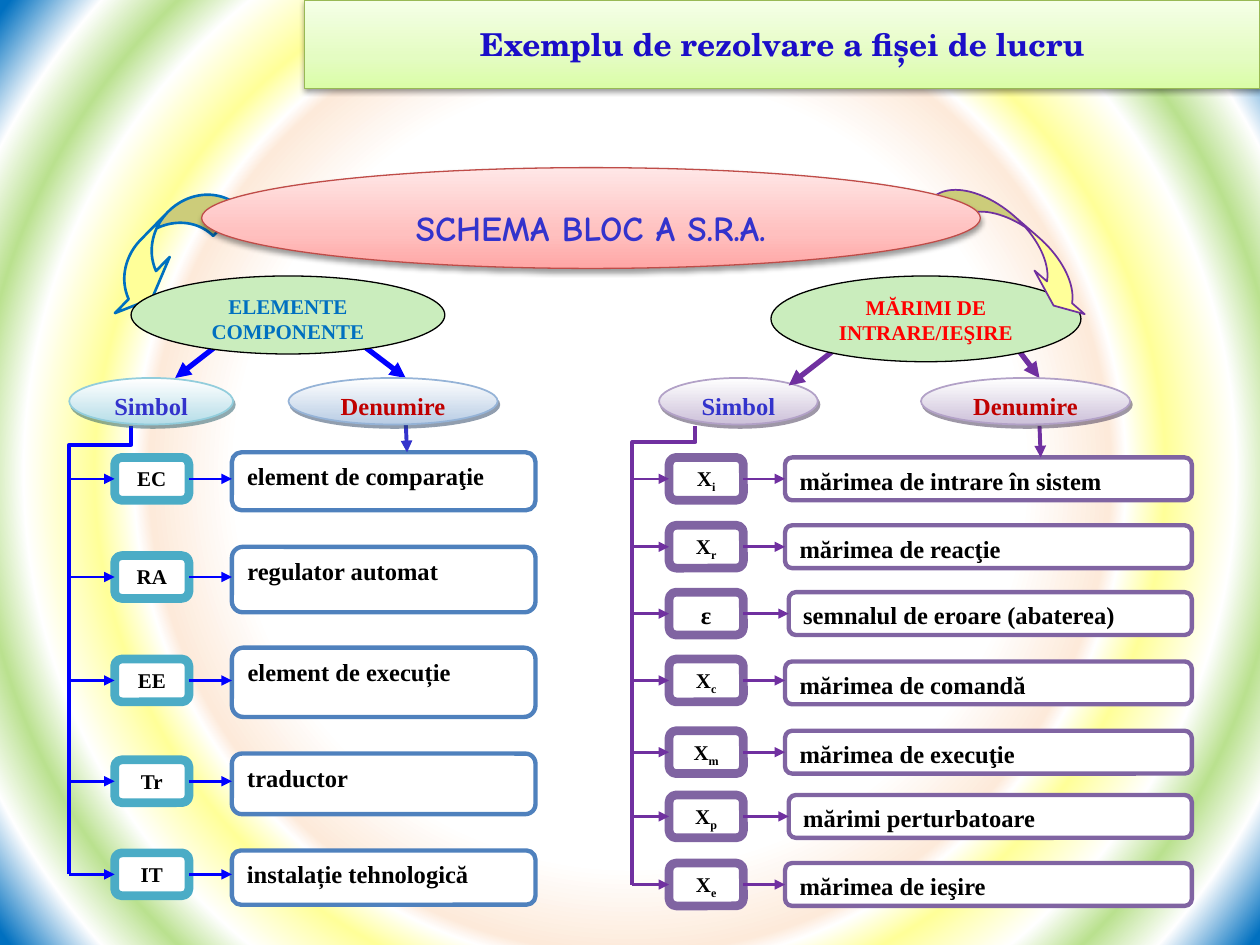
"""Build the worksheet slide: block diagram symbols and their names."""
from typing import NamedTuple

from pptx import Presentation
from pptx.dml.color import RGBColor as Color
from pptx.enum.shapes import MSO_CONNECTOR as Link, MSO_SHAPE as Preset
from pptx.enum.text import MSO_ANCHOR as Anchor, MSO_AUTO_SIZE as AutoSize, PP_ALIGN as Align
from pptx.oxml import parse_xml
from pptx.oxml.ns import nsdecls, qn
from pptx.util import Pt

COLORS = {
    "white": "FFFFFF", "black": "000000", "title": "1B0EC8", "indigo": "3333CC",
    "blue": "0000FF", "azure": "0070C0", "purple": "7030A0", "violet": "8064A2",
    "teal": "4BACC6", "steel": "4F81BD", "red": "FF0000", "dark red": "C00000",
    "mint": "CAEDBD", "yellow": "FFFF99", "peach": "FDEADA", "green": "BAE18F",
    "lime": "DAFDA7", "lime mid": "E4FCC2", "lime light": "F5FFE7", "lime edge": "98B955",
    "rose": "FFA6A5", "rose mid": "FFC0BF", "rose light": "FFE7E7", "rose edge": "BF4C48",
    "aqua": "B6DDE8", "aqua edge": "92CDDC", "aqua shade": "205867",
    "sky": "B8CCE4", "sky edge": "95B3D7", "sky shade": "243F60",
    "lilac": "CCC0D9", "lilac edge": "B2A1C7", "lilac shade": "3F3151",
}
SERIF = "Times New Roman"
SOFT_SHADOW = ("black", 38, 3.1, 1.6, 90)


class Row(NamedTuple):
    """A symbol with its subscript, its name and the places of both boxes."""
    symbol: str
    subscript: str
    name: str
    top: float
    name_top: float
    name_height: float = 24.5
    name_left: float = 448.6
    size: int = 12


LEFT_ROWS = [
    Row("EC", "", "element de comparaţie", 261.4, 258.5, 33.1, 132.5),
    Row("RA", "", "regulator automat", 317.5, 312.5, 37.4, 132.5),
    Row("EE", "", "element de execuție", 376.6, 370.1, 39.6, 132.5),
    Row("Tr", "", "traductor", 434.2, 430.6, 34.6, 132.5),
    Row("IT", "", "instalație tehnologică", 487.4, 486, 31, 132.5),
]
RIGHT_ROWS = [
    Row("X", "i", "mărimea de intrare în sistem", 261.4, 261.4),
    Row("X", "r", "mărimea de reacţie", 300.2, 300.2),
    Row("ε", "", "semnalul de eroare (abaterea)", 338.4, 338.4, name_left=450.7, size=14),
    Row("X", "c", "mărimea de comandă", 376.6, 378),
    Row("X", "m", "mărimea de execuţie", 417.6, 417.6),
    Row("X", "p", "mărimi perturbatoare", 454.3, 454.3, name_left=450.7),
    Row("X", "e", "mărimea de ieşire", 493.2, 493.2),
]


def rgb(name):
    """Return the named colour."""
    return Color.from_string(COLORS[name])


def apply(target, **formats):
    """Set every format value on the target."""
    for name, value in formats.items():
        setattr(target, name, value)


def set_gradient(fill, properties, stops, direction):
    """Fill with a gradient of (percent, colour) stops."""
    fill.solid()
    marks = "".join(f'<a:gs pos="{position * 1000}"><a:srgbClr val="{COLORS[name]}"/></a:gs>'
                    for position, name in stops)
    gradient = parse_xml(f'<a:gradFill {nsdecls("a")} rotWithShape="1"><a:gsLst>{marks}</a:gsLst>'
                         f'{direction}</a:gradFill>')
    properties.replace(properties.find(qn("a:solidFill")), gradient)


def style_shape(shape, fill, line, width, shadow=None, angle=90):
    """Give a shape its plain or gradient fill, its outline and its shadow."""
    properties = shape.element.spPr
    if isinstance(fill, str):
        shape.fill.solid()
        shape.fill.fore_color.rgb = rgb(fill)
    else:
        set_gradient(shape.fill, properties, fill, f'<a:lin ang="{angle * 60000}" scaled="0"/>')
    shape.line.color.rgb = rgb(line)
    shape.line.width = Pt(width)
    shape.shadow.inherit = False
    if shadow:
        name, alpha, blur, distance, heading = shadow
        properties.find(qn("a:effectLst")).append(parse_xml(
            f'<a:outerShdw {nsdecls("a")} blurRad="{Pt(blur)}" dist="{Pt(distance)}" '
            f'dir="{heading * 60000}" rotWithShape="0"><a:srgbClr val="{COLORS[name]}">'
            f'<a:alpha val="{alpha * 1000}"/></a:srgbClr></a:outerShdw>'))


def write(shape, text, size, color="black", font=SERIF, align=Align.CENTER, after=10,
          subscript="", **frame_formats):
    """Write one bold paragraph, with an optional subscript."""
    frame = shape.text_frame
    apply(frame, **{"word_wrap": True, "auto_size": AutoSize.NONE,
                    "vertical_anchor": Anchor.TOP, **frame_formats})
    paragraph = frame.paragraphs[0]
    apply(paragraph, alignment=align, space_after=Pt(after))
    for part in filter(None, (text, subscript)):
        run = paragraph.add_run()
        run.text = part
        apply(run.font, name=font, size=Pt(size), bold=True)
        run.font.color.rgb = rgb(color)
    if subscript:
        run._r.get_or_add_rPr().set("baseline", "-25000")


def add_shape(slide, preset, box, *style, **options):
    """Add a styled preset shape at left, top, width, height."""
    shape = slide.shapes.add_shape(preset, *map(Pt, box))
    style_shape(shape, *style, **options)
    return shape


def add_line(slide, start, end, color, width, kind=Link.STRAIGHT, arrow=True):
    """Add a connector, with an arrowhead at its end."""
    line = slide.shapes.add_connector(kind, *map(Pt, start + end))
    line.line.color.rgb = rgb(color)
    line.line.width = Pt(width)
    properties = line.element.spPr
    if arrow:
        properties.find(qn("a:ln")).append(parse_xml(f'<a:tailEnd {nsdecls("a")} type="triangle"/>'))
    properties.append(parse_xml(f'<a:effectLst {nsdecls("a")}/>'))
    return line


def add_bus(slide, start, end, color, bend):
    """Add an elbow that leaves downwards, turned a quarter about its centre."""
    half_length, half_depth = (end[1] - start[1]) / 2, (start[0] - end[0]) / 2
    x, y = (start[0] + end[0]) / 2, (start[1] + end[1]) / 2
    bus = add_line(slide, (x - half_length, y - half_depth), (x + half_length, y + half_depth),
                   color, 2.25, Link.ELBOW, False)
    bus.element.spPr.xfrm.set("rot", str(90 * 60000))
    guides = bus.element.spPr.find(qn("a:prstGeom")).get_or_add_avLst()
    guides.append(parse_xml(f'<a:gd {nsdecls("a")} name="adj1" fmla="val {bend}"/>'))


def add_column(slide, rows, left, right, bus_start, bus_x, bend, edges, color):
    """Add the symbol boxes, the name boxes and the arrows joining them."""
    symbol_edge, name_edge = edges
    for row in rows:
        symbol = add_shape(slide, Preset.ROUNDED_RECTANGLE, (left, row.top, 42.5, 24.5),
                           "white", symbol_edge, 5)
        write(symbol, row.symbol, row.size, subscript=row.subscript)
        name = add_shape(slide, Preset.ROUNDED_RECTANGLE,
                         (row.name_left, row.name_top, right - row.name_left, row.name_height),
                         "white", name_edge, 2.5)
        write(name, row.name, 14, align=Align.LEFT)
        middle = row.top + 12.25
        add_line(slide, (bus_x, middle), (left, middle), color, 1.5).end_connect(symbol, 1)
        arrow = add_line(slide, (left + 42.5, middle), (row.name_left, middle), color, 1.5)
        arrow.begin_connect(symbol, 3)
        if row.top == row.name_top:
            arrow.end_connect(name, 1)
    add_bus(slide, bus_start, (bus_x, middle), color, bend)


def add_heading(slide, text, left, width, tint, color):
    """Add a small oval column heading."""
    oval = add_shape(slide, Preset.OVAL, (left, 216, width, 26.6), [(0, "white"), (100, tint)],
                     f"{tint} edge", 1, shadow=(f"{tint} shade", 50, 0, 2.2, 63))
    write(oval, text, 14, color)


def add_curved_arrow(slide, box, rotation, line, width, flip=False):
    """Add a turned curved arrow."""
    arrow = add_shape(slide, Preset.CURVED_DOWN_ARROW, box, "yellow", line, width)
    arrow.rotation = rotation
    for index, value in enumerate((0.798, 1.597, 0.333)):
        arrow.adjustments[index] = value
    if flip:
        arrow.element.spPr.xfrm.set("flipH", "1")


def add_title(slide):
    """Shape the title placeholder as an elliptical callout."""
    title = slide.shapes.title
    apply(title, left=Pt(174.2), top=Pt(0), width=Pt(545.8), height=Pt(50.4))
    title.element.spPr.append(parse_xml(
        f'<a:prstGeom {nsdecls("a")} prst="wedgeEllipseCallout"><a:avLst>'
        '<a:gd name="adj1" fmla="val -26500"/><a:gd name="adj2" fmla="val 119400"/>'
        '</a:avLst></a:prstGeom>'))
    style_shape(title, [(0, "lime"), (35, "lime mid"), (100, "lime light")],
                "lime edge", 0.75, SOFT_SHADOW, 270)
    write(title, "Exemplu de rezolvare a fișei de lucru", 18, "title", "TeX Gyre Schola",
          after=0, vertical_anchor=Anchor.MIDDLE)


def main():
    """Build and save the slide."""
    presentation = Presentation()
    apply(presentation, slide_width=Pt(720), slide_height=Pt(540))
    slide = presentation.slides.add_slide(presentation.slide_layouts[5])
    background = slide.background.fill
    background.solid()
    set_gradient(background, slide.element.find(f".//{qn('p:bgPr')}"),
                 [(50, "white"), (61, "peach"), (63, "white"), (68, "yellow"), (77, "white"),
                  (83, "green"), (90, "white"), (99, "azure")],
                 '<a:path path="circle"><a:fillToRect l="50000" t="50000" r="50000" b="50000"/></a:path>')
    add_title(slide)
    add_column(slide, RIGHT_ROWS, 382.3, 681.1, (397.4, 243.4), 361.4, 3500,
               ("violet", "violet"), "purple")
    add_line(slide, (594, 243.4), (594.7, 261.4), "purple", 2.25)
    add_column(slide, LEFT_ROWS, 65.5, 306, (74.9, 243.4), 39.6, 4200, ("teal", "steel"), "blue")
    add_line(slide, (231.8, 239.8), (232.6, 258.5), "indigo", 2.25)
    add_heading(slide, "Simbol", 39.6, 93.6, "aqua", "indigo")
    add_heading(slide, "Simbol", 376.6, 90.7, "lilac", "indigo")
    add_curved_arrow(slide, (46.8, 128.9, 95, 28.1), 314.3, "azure", 1.5, flip=True)
    for start, end, color in [((132.5, 190.8), (100.1, 216), "blue"),
                              ((198.7, 190.8), (231.8, 216), "blue"),
                              ((578.2, 195.1), (594, 216), "purple"),
                              ((483.1, 195.1), (450.7, 220.3), "purple")]:
        add_line(slide, start, end, color, 3)
    for text, box, color in [("ELEMENTE COMPONENTE", (74.9, 157.7, 179.3, 44.6), "azure"),
                             ("MĂRIMI DE INTRARE/IEŞIRE", (440.6, 157.7, 177.1, 49), "red")]:
        write(add_shape(slide, Preset.OVAL, box, "mint", "black", 0.75), text, 12, color)
    add_curved_arrow(slide, (526.3, 129.6, 111.6, 23.8), 41, "purple", 1)
    schema = add_shape(slide, Preset.OVAL, (115.2, 95.8, 445, 57.6),
                       [(0, "rose"), (35, "rose mid"), (100, "rose light")],
                       "rose edge", 0.75, shadow=SOFT_SHADOW, angle=270)
    write(schema, "SCHEMA BLOC A S.R.A.", 20, "indigo", "Comic Neue", after=0,
          margin_top=Pt(14), margin_bottom=Pt(0))
    add_heading(slide, "Denumire", 164.9, 119.5, "sky", "dark red")
    add_heading(slide, "Denumire", 526.3, 119.5, "lilac", "dark red")
    presentation.save("out.pptx")


if __name__ == "__main__":
    main()
